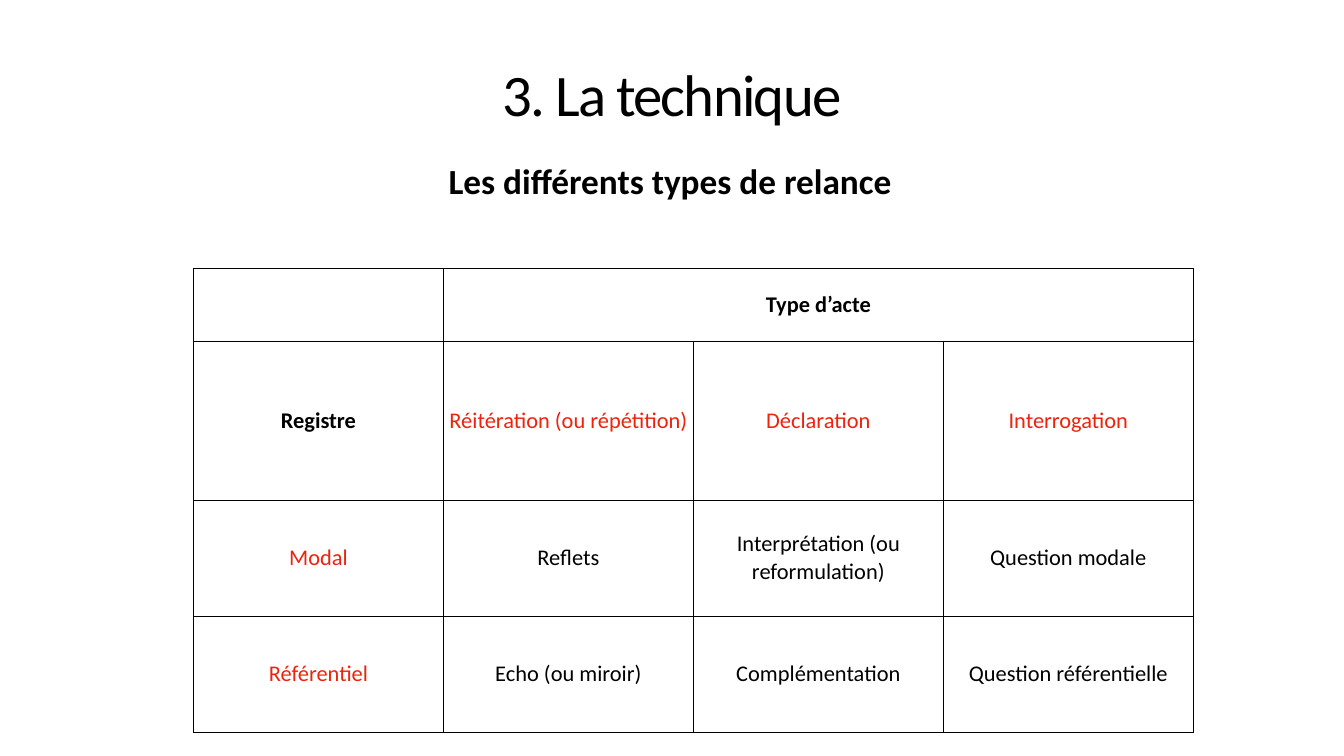
from dataclasses import dataclass

from lxml.etree import SubElement
from pptx import Presentation
from pptx.dml.color import RGBColor
from pptx.enum.text import MSO_VERTICAL_ANCHOR as Anchor, PP_PARAGRAPH_ALIGNMENT as Align
from pptx.oxml.ns import qn
from pptx.table import _Cell as Cell
from pptx.text.text import _Paragraph as Paragraph
from pptx.util import Pt

PX = 9144
INSET = 6
FONT = "Calibri"
COLORS = {"page": "FFFFFF", "ink": "000000", "accent": "EE220D"}


@dataclass(frozen=True)
class Style:
    size: float
    color: str = "ink"
    bold: bool = False
    tracking: int = 0


@dataclass(frozen=True)
class Heading:
    text: str
    left: int
    top: int
    width: int
    height: int
    style: Style
    anchor: Anchor
    line_spacing: float = 1.0
    inset_top: int = INSET
    inset_right: int = INSET


@dataclass(frozen=True)
class Entry:
    text: str
    style: Style


BOLD = Style(32, bold=True)
PLAIN = Style(32)
ACCENT = Style(32, "accent")

HEADINGS = [
    Heading("3. La technique", 139, 89, 2389, 170,
            Style(84, tracking=-250), Anchor.BOTTOM, line_spacing=0.8),
    Heading("Les différents types de relance", 96, 235, 2516, 277,
            Style(50.4, bold=True), Anchor.TOP, inset_top=84, inset_right=54),
]

TABLE_LEFT, TABLE_TOP = 384, 532
COLUMN_WIDTH, COLUMN_COUNT = 496, 4
ROW_HEIGHTS = [145, 315, 230, 230]
ENTRIES = [
    [Entry("", PLAIN), Entry("Type d’acte", BOLD)],
    [Entry("Registre", BOLD), Entry("Réitération (ou répétition)", ACCENT),
     Entry("Déclaration", ACCENT), Entry("Interrogation", ACCENT)],
    [Entry("Modal", ACCENT), Entry("Reflets", PLAIN),
     Entry("Interprétation (ou reformulation)", PLAIN), Entry("Question modale", PLAIN)],
    [Entry("Référentiel", ACCENT), Entry("Echo (ou miroir)", PLAIN),
     Entry("Complémentation", PLAIN), Entry("Question référentielle", PLAIN)],
]


def add_span(para: Paragraph, text: str, style: Style) -> None:
    para.alignment = Align.CENTER
    span = para.add_run()
    span.text = text
    span.font.name = FONT
    span.font.size = Pt(style.size)
    span.font.bold = style.bold
    span.font.color.rgb = RGBColor.from_string(COLORS[style.color])
    if style.tracking:
        span.font._element.set("spc", str(style.tracking))


def add_heading(page, heading: Heading) -> None:
    box = page.shapes.add_textbox(heading.left * PX, heading.top * PX,
                                  heading.width * PX, heading.height * PX)
    frame = box.text_frame
    frame.word_wrap = True
    frame.vertical_anchor = heading.anchor
    frame.margin_left = frame.margin_bottom = INSET * PX
    frame.margin_top = heading.inset_top * PX
    frame.margin_right = heading.inset_right * PX
    para = frame.paragraphs[0]
    para.line_spacing = heading.line_spacing
    add_span(para, heading.text, heading.style)


def style_cell(cell: Cell) -> None:
    cell.margin_left = cell.margin_right = INSET * PX
    cell.margin_top = cell.margin_bottom = INSET * PX
    cell.vertical_anchor = Anchor.MIDDLE
    properties = cell._tc.get_or_add_tcPr()
    for side in ("lnL", "lnR", "lnT", "lnB"):
        line = SubElement(properties, qn(f"a:{side}"), w=str(Pt(1)))
        fill = SubElement(line, qn("a:solidFill"))
        SubElement(fill, qn("a:srgbClr"), val=COLORS["ink"])
    cell.fill.background()


def add_relance_table(page) -> None:
    frame = page.shapes.add_table(len(ROW_HEIGHTS), COLUMN_COUNT,
                                  TABLE_LEFT * PX, TABLE_TOP * PX,
                                  COLUMN_WIDTH * COLUMN_COUNT * PX, sum(ROW_HEIGHTS) * PX)
    table = frame.table
    table.first_row = table.horz_banding = False
    for column in table.columns:
        column.width = COLUMN_WIDTH * PX
    for row, height in zip(table.rows, ROW_HEIGHTS):
        row.height = height * PX
    for cell in table.iter_cells():
        style_cell(cell)
    table.cell(0, 1).merge(table.cell(0, COLUMN_COUNT - 1))
    for row_index, entries in enumerate(ENTRIES):
        for column_index, entry in enumerate(entries):
            if entry.text:
                para = table.cell(row_index, column_index).text_frame.paragraphs[0]
                add_span(para, entry.text, entry.style)


def main() -> None:
    deck = Presentation()
    deck.slide_width, deck.slide_height = 2667 * PX, 1500 * PX
    page = deck.slides.add_slide(deck.slide_layouts[6])
    page.background.fill.solid()
    page.background.fill.fore_color.rgb = RGBColor.from_string(COLORS["page"])
    for heading in HEADINGS:
        add_heading(page, heading)
    add_relance_table(page)
    deck.save("out.pptx")


if __name__ == "__main__":
    main()
